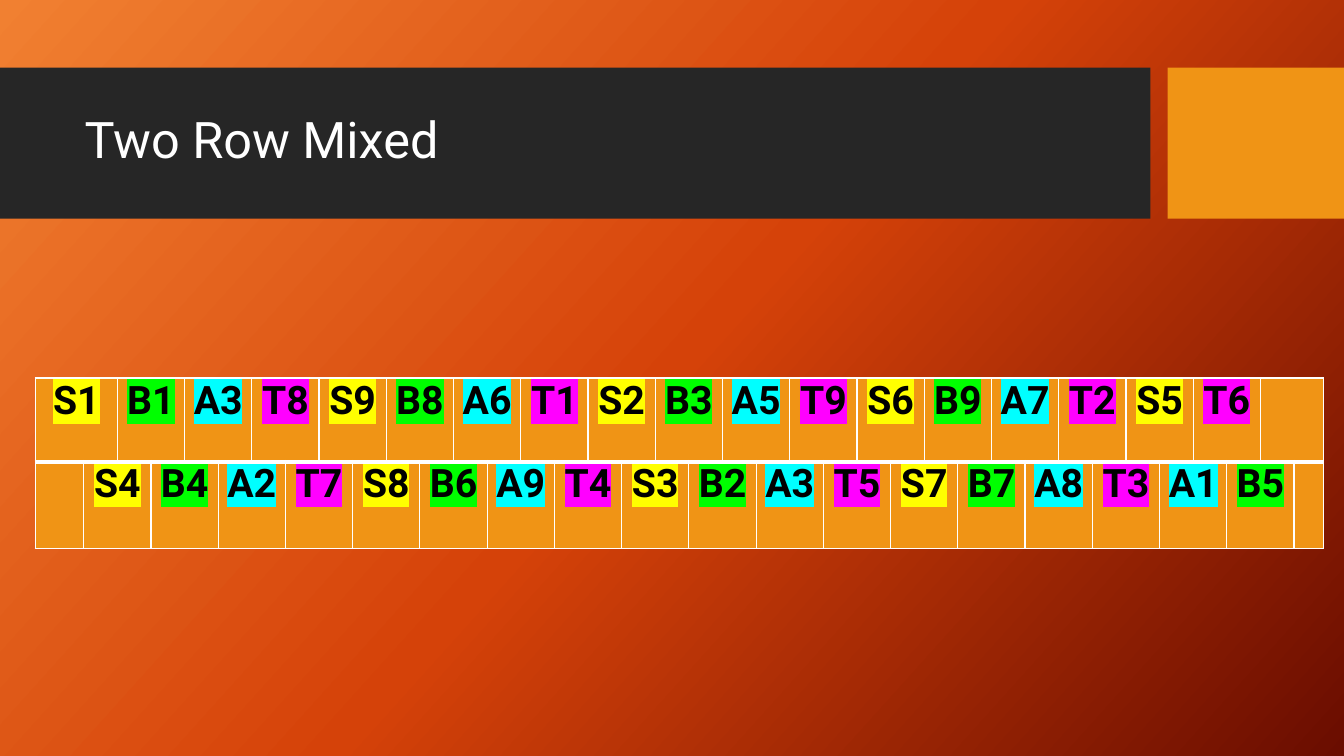
import dataclasses

import lxml.etree
import pptx
import pptx.dml.color
import pptx.enum.shapes
import pptx.enum.text
import pptx.oxml.ns
import pptx.util

Inches = pptx.util.Inches
Pt = pptx.util.Pt
qn = pptx.oxml.ns.qn

TOP_LABELS = "S1 B1 A3 T8 S9 B8 A6 T1 S2 B3 A5 T9 S6 B9 A7 T2 S5 T6".split()
BOTTOM_LABELS = "S4 B4 A2 T7 S8 B6 A9 T4 S3 B2 A3 T5 S7 B7 A8 T3 A1 B5".split()


@dataclasses.dataclass(frozen=True)
class Theme:
    """Colours, font and type sizes of the slide."""

    font: str = "Roboto"
    title_size: int = 36
    label_size: int = 28
    band: str = "262626"
    accent: str = "F09415"
    light: str = "FFFFFF"
    dark: str = "000000"
    background: tuple = ((0, "F18031"), (50, "D54209"), (100, "6A0D00"))
    highlights: tuple = (("S", "FFFF00"), ("B", "00FF00"), ("A", "00FFFF"), ("T", "FF00FF"))


def add_colour(parent, tag, colour):
    """Add a child that holds an RGB colour."""
    child = lxml.etree.SubElement(parent, qn(tag))
    lxml.etree.SubElement(child, qn("a:srgbClr"), val=colour)
    return child


class SlideBuilder:
    """Draws styled elements on the current slide."""

    def __init__(self, slide, theme):
        self.slide = slide
        self.theme = theme

    def style_font(self, font, size, colour, bold=False):
        """Apply the theme font with the given size and colour."""
        font.name = self.theme.font
        font.size = Pt(size)
        font.bold = bold
        font.color.rgb = pptx.dml.color.RGBColor.from_string(colour)

    def fill(self, target, colour):
        """Give a shape or cell a solid fill."""
        target.fill.solid()
        target.fill.fore_color.rgb = pptx.dml.color.RGBColor.from_string(colour)

    def background(self, angle):
        """Paint the diagonal background gradient."""
        fill = self.slide.background.fill
        fill.gradient()
        fill.gradient_angle = 360 - angle
        stops = next(self.slide.element.iter(qn("a:gsLst")))
        for stop in list(stops):
            stops.remove(stop)
        for position, colour in self.theme.background:
            add_colour(stops, "a:gs", colour).set("pos", str(position * 1000))

    def rectangle(self, left, top, width, height, colour):
        """Add a plain filled rectangle."""
        shape = self.slide.shapes.add_shape(
            pptx.enum.shapes.MSO_SHAPE.RECTANGLE,
            Inches(left), Inches(top), Inches(width), Inches(height))
        shape.shadow.inherit = False
        shape.line.fill.background()
        self.fill(shape, colour)

    def title(self, left, top, width, height, text):
        """Add the slide title."""
        shape = self.slide.shapes.add_textbox(
            Inches(left), Inches(top), Inches(width), Inches(height))
        frame = shape.text_frame
        frame.word_wrap = True
        frame.vertical_anchor = pptx.enum.text.MSO_ANCHOR.MIDDLE
        paragraph = frame.paragraphs[0]
        paragraph.text = text
        paragraph.line_spacing = 0.9
        self.style_font(paragraph.font, self.theme.title_size, self.theme.light)

    def borders(self, cell, top, bottom):
        """Draw cell borders with the given top and bottom widths."""
        properties = cell._tc.get_or_add_tcPr()
        for side, width in (("L", 1), ("R", 1), ("T", top), ("B", bottom)):
            line = add_colour(properties, f"a:ln{side}", self.theme.light)
            line.set("w", str(Pt(width)))
            line[0].getparent().replace(line[0], self.solid_fill())

    def solid_fill(self):
        """Return a solid fill element for a border line."""
        holder = lxml.etree.Element(qn("a:ln"))
        return add_colour(holder, "a:solidFill", self.theme.light)

    def label(self, cell, text):
        """Write a centred label highlighted by its letter."""
        cell.margin_left = cell.margin_right = Inches(0.07)
        cell.margin_top = cell.margin_bottom = 0
        paragraph = cell.text_frame.paragraphs[0]
        paragraph.alignment = pptx.enum.text.PP_ALIGN.CENTER
        run = paragraph.add_run()
        run.text = text
        self.style_font(paragraph.font, self.theme.label_size, self.theme.dark, bold=True)
        add_colour(run._r.get_or_add_rPr(), "a:highlight", dict(self.theme.highlights)[text[0]])

    def staggered_table(self, left, top, widths, heights, rows):
        """Add a table whose labels span two columns from each row's offset."""
        frame = self.slide.shapes.add_table(
            len(heights), len(widths), Inches(left), Inches(top),
            Inches(sum(widths)), Inches(sum(heights)))
        table = frame.table
        table.first_row = table.horz_banding = False
        for column, width in zip(table.columns, widths):
            column.width = Inches(width)
        for row, height in zip(table.rows, heights):
            row.height = Inches(height)
        last = len(heights) - 1
        for index, (offset, labels) in enumerate(rows):
            for column in range(len(widths)):
                cell = table.cell(index, column)
                self.borders(cell, 3 if index else 1, 3 if index < last else 1)
                self.fill(cell, self.theme.accent)
            for column in range(offset, len(widths) - 1, 2):
                table.cell(index, column).merge(table.cell(index, column + 1))
            for position, text in enumerate(labels):
                self.label(table.cell(index, offset + 2 * position), text)


def main():
    """Build and save the slide."""
    presentation = pptx.Presentation()
    presentation.slide_width = Inches(13.33)
    presentation.slide_height = Inches(7.5)
    slide = presentation.slides.add_slide(presentation.slide_layouts[6])
    theme = Theme()
    builder = SlideBuilder(slide, theme)
    builder.background(42)
    builder.rectangle(0, 0.67, 11.41, 1.5, theme.band)
    builder.rectangle(11.58, 0.67, 1.75, 1.5, theme.accent)
    builder.title(0.74, 0.82, 10.51, 1.18, "Two Row Mixed")
    first, final, inner_count = 0.48, 0.29, 36
    inner = (12.78 - first - final) / inner_count
    widths = [first] + [inner] * inner_count + [final]
    rows = [(0, TOP_LABELS), (1, BOTTOM_LABELS)]
    builder.staggered_table(0.35, 3.75, widths, [0.83, 0.86], rows)
    presentation.save("out.pptx")


if __name__ == "__main__":
    main()
